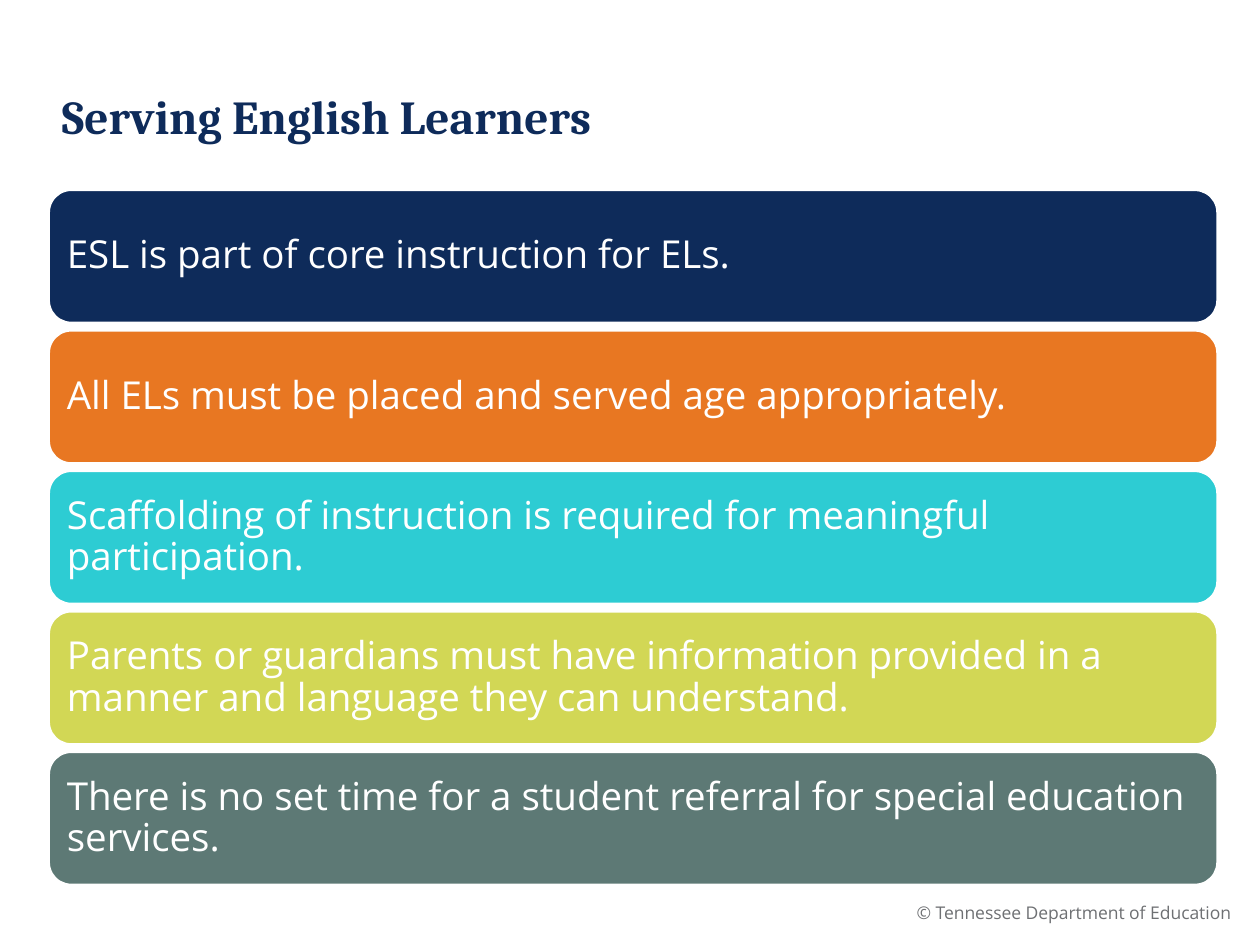
"""Build the slide on serving English learners."""
from pptx import Presentation
from pptx.dml.color import RGBColor
from pptx.enum.shapes import MSO_SHAPE
from pptx.enum.text import MSO_ANCHOR, PP_ALIGN
from pptx.util import Inches, Pt

COLORS = {
    "navy": "0E2B5A",
    "orange": "E87722",
    "teal": "2DCCD3",
    "lime": "D2D755",
    "slate": "5D7975",
    "gray": "6E7073",
    "white": "FFFFFF",
}
STATEMENTS = [
    ("navy", "ESL is part of core instruction for ELs."),
    ("orange", "All ELs must be placed and served age appropriately."),
    ("teal", "Scaffolding of instruction is required for meaningful participation."),
    ("lime", "Parents or guardians must have information provided in a manner "
             "and language they can understand."),
    ("slate", "There is no set time for a student referral for special education services."),
]
BAR_LEFT, BAR_WIDTH, BAR_HEIGHT = 0.39, 9.27, 1.05
FIRST_TOP, LAST_TOP = 1.51, 5.97


def color(name):
    return RGBColor.from_string(COLORS[name])


def write(frame, text, *, size, ink, font="Open Sans", bold=False,
          align=PP_ALIGN.LEFT, anchor=MSO_ANCHOR.MIDDLE, spacing=0.9,
          insets=(0.09, 0.09, 0.09, 0.09)):
    frame.word_wrap = True
    frame.vertical_anchor = anchor
    (frame.margin_left, frame.margin_top,
     frame.margin_right, frame.margin_bottom) = map(Inches, insets)
    para = frame.paragraphs[0]
    para.alignment = align
    para.line_spacing = spacing
    span = para.add_run()
    span.text = text
    span.font.name = font
    span.font.size = Pt(size)
    span.font.bold = bold
    span.font.color.rgb = color(ink)


class SlideBuilder:
    def __init__(self, deck):
        self.page = deck.slides.add_slide(deck.slide_layouts[5])

    def title(self, text, left, top, width, height):
        box = self.page.shapes.title
        box.left, box.top, box.width, box.height = map(Inches, (left, top, width, height))
        write(box.text_frame, text, size=27, ink="navy", font="Cambria", bold=True,
              spacing=1.0, insets=(0.1, 0.05, 0.1, 0.05))

    def bar(self, text, fill, left, top, width, height):
        box = self.page.shapes.add_shape(
            MSO_SHAPE.ROUNDED_RECTANGLE, *map(Inches, (left, top, width, height)))
        box.shadow.inherit = False
        box.fill.solid()
        box.fill.fore_color.rgb = color(fill)
        box.line.color.rgb = color("white")
        box.line.width = Pt(1)
        write(box.text_frame, text, size=22, ink="white")

    def footer(self, text, left, top, width, height):
        box = self.page.shapes.add_textbox(*map(Inches, (left, top, width, height)))
        write(box.text_frame, text, size=10, ink="gray", align=PP_ALIGN.RIGHT,
              anchor=MSO_ANCHOR.TOP, insets=(0.1, 0.05, 0.13, 0.05))


def main():
    deck = Presentation()
    deck.slide_width, deck.slide_height = Inches(10), Inches(7.5)
    builder = SlideBuilder(deck)
    builder.footer("© Tennessee Department of Education", 6.77, 7.13, 3.13, 0.25)
    builder.title("Serving English Learners", 0.39, 0.26, 7.14, 1.32)
    pitch = (LAST_TOP - FIRST_TOP) / (len(STATEMENTS) - 1)
    for index, (fill, text) in enumerate(STATEMENTS):
        builder.bar(text, fill, BAR_LEFT, FIRST_TOP + index * pitch, BAR_WIDTH, BAR_HEIGHT)
    deck.save("out.pptx")


if __name__ == "__main__":
    main()
